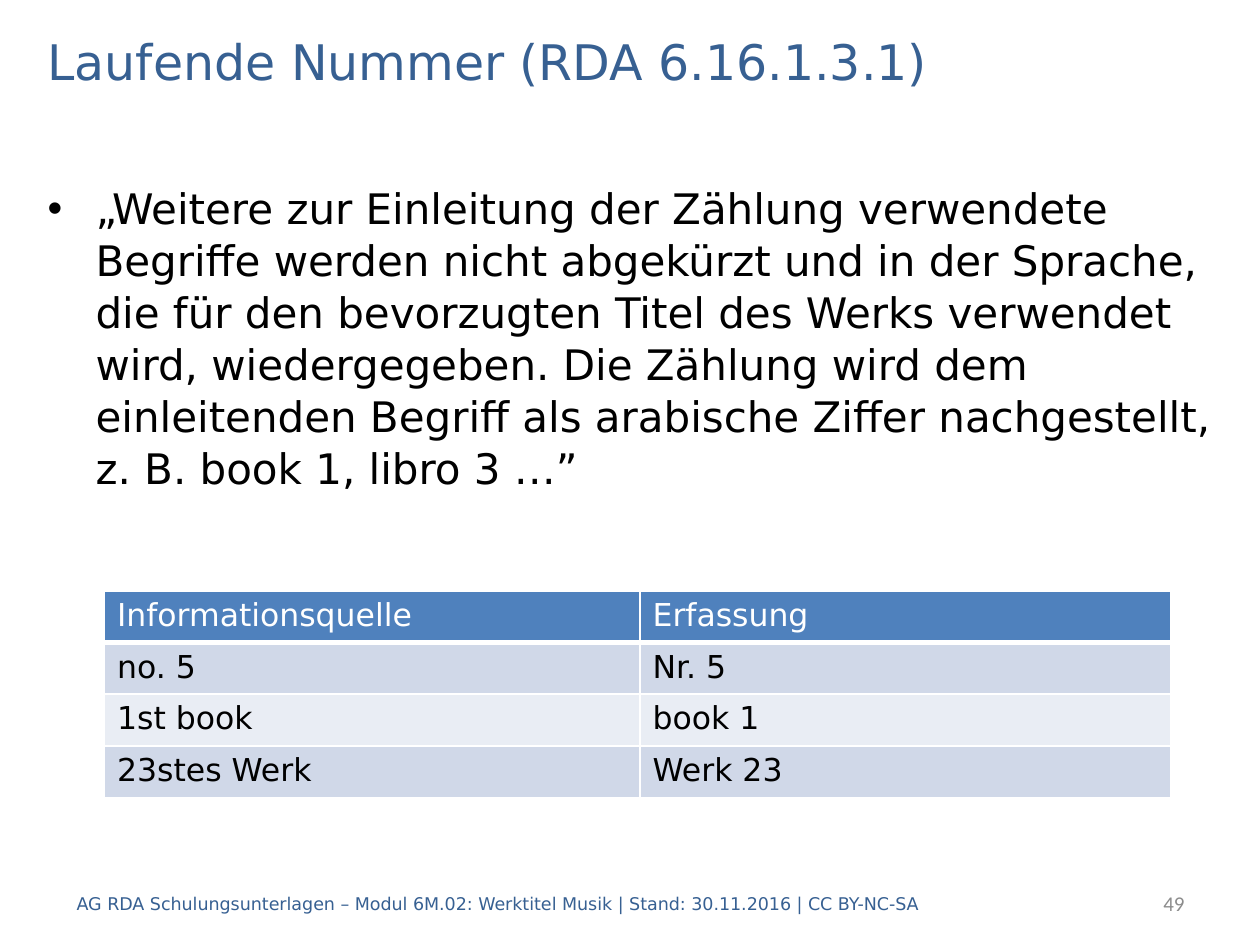
from dataclasses import dataclass

from lxml import etree
from pptx import Presentation
from pptx.dml.color import RGBColor
from pptx.enum import text
from pptx.oxml.ns import qn
from pptx.util import Inches, Pt


@dataclass(frozen=True)
class Theme:
    font: str = "DejaVu Sans"
    number_font: str = "Calibri"
    title: int = 28
    body: int = 24
    table: int = 18
    number: int = 12
    footer: int = 10
    blue: str = "376092"
    black: str = "000000"
    white: str = "FFFFFF"
    grey: str = "8C8C8C"
    header: str = "4F81BD"
    bands: tuple = ("D0D8E8", "E9EDF4")


class SlideBuilder:
    def __init__(self, slide, theme):
        self.slide = slide
        self.theme = theme

    def style(self, paragraph, size, color, font=None):
        values = {"size": Pt(size), "name": font or self.theme.font}
        for run in paragraph.runs:
            for name, value in values.items():
                setattr(run.font, name, value)
            run.font.color.rgb = RGBColor.from_string(color)

    def text(self, words, box, size, color, font=None,
             anchor=text.MSO_ANCHOR.MIDDLE, **paragraph_format):
        """Add a wrapped text box and return its frame."""
        frame = self.slide.shapes.add_textbox(*map(Inches, box)).text_frame
        frame.word_wrap = True
        frame.vertical_anchor = anchor
        paragraph = frame.paragraphs[0]
        paragraph.text = words
        for name, value in paragraph_format.items():
            setattr(paragraph, name, value)
        self.style(paragraph, size, color, font)
        return frame

    def bullet(self, words, box, top_inset, indent):
        frame = self.text(words, box, self.theme.body, self.theme.black,
                          anchor=text.MSO_ANCHOR.TOP, line_spacing=1.03)
        frame.margin_top = Inches(top_inset)
        properties = frame.paragraphs[0]._p.get_or_add_pPr()
        properties.set("marL", str(Inches(indent)))
        properties.set("indent", str(-Inches(indent)))
        etree.SubElement(properties, qn("a:buFont"), typeface="Arial")
        etree.SubElement(properties, qn("a:buChar"), char="•")

    def borders(self, cell, **widths):
        properties = cell._tc.get_or_add_tcPr()
        fill = properties[0]
        for side, width in widths.items():
            line = etree.Element(qn(f"a:ln{side}"), w=str(Pt(width)))
            solid = etree.SubElement(line, qn("a:solidFill"))
            etree.SubElement(solid, qn("a:srgbClr"), val=self.theme.white)
            fill.addprevious(line)

    def table(self, rows, left, top, widths, row_height):
        table = self.slide.shapes.add_table(
            len(rows), len(widths), Inches(left), Inches(top),
            Inches(sum(widths)), Inches(row_height * len(rows))).table
        for column, width in zip(table.columns, widths):
            column.width = Inches(width)
        for r, entries in enumerate(rows):
            table.rows[r].height = Inches(row_height)
            fill = self.theme.bands[(r - 1) % 2] if r else self.theme.header
            color = self.theme.black if r else self.theme.white
            for c, entry in enumerate(entries):
                cell = table.cell(r, c)
                cell.text = entry
                cell.fill.solid()
                cell.fill.fore_color.rgb = RGBColor.from_string(fill)
                self.style(cell.text_frame.paragraphs[0], self.theme.table, color)
                self.borders(cell, L=1, R=1, T=3 if r == 1 else 1,
                             B=1 if r else 3)


def main():
    deck = Presentation()
    deck.slide_width, deck.slide_height = Inches(10), Inches(7.5)
    theme = Theme()
    page = SlideBuilder(deck.slides.add_slide(deck.slide_layouts[6]), theme)

    page.bullet(
        "„Weitere zur Einleitung der Zählung verwendete Begriffe werden nicht "
        "abgekürzt und in der Sprache, die für den bevorzugten Titel des Werks "
        "verwendet wird, wiedergegeben. Die Zählung wird dem einleitenden "
        "Begriff als arabische Ziffer nachgestellt, z. B. book 1, libro 3 …”",
        (0.28, 0.92, 9.45, 5.98), top_inset=0.52, indent=0.38)
    page.text("Laufende Nummer (RDA 6.16.1.3.1)", (0.28, 0.2, 9.45, 0.56),
              theme.title, theme.blue)
    page.table([("Informationsquelle", "Erfassung"),
                ("no. 5", "Nr. 5"),
                ("1st book", "book 1"),
                ("23stes Werk", "Werk 23")],
               0.83, 4.69, widths=(4.25, 4.21), row_height=0.41)
    page.text("AG RDA Schulungsunterlagen – Modul 6M.02: Werktitel Musik | "
              "Stand: 30.11.2016 | CC BY-NC-SA", (0.51, 6.97, 7.8, 0.4),
              theme.footer, theme.blue)
    page.text("49", (7.91, 6.97, 1.59, 0.4), theme.number, theme.grey,
              theme.number_font, alignment=text.PP_ALIGN.RIGHT)
    deck.save("out.pptx")


if __name__ == "__main__":
    main()
